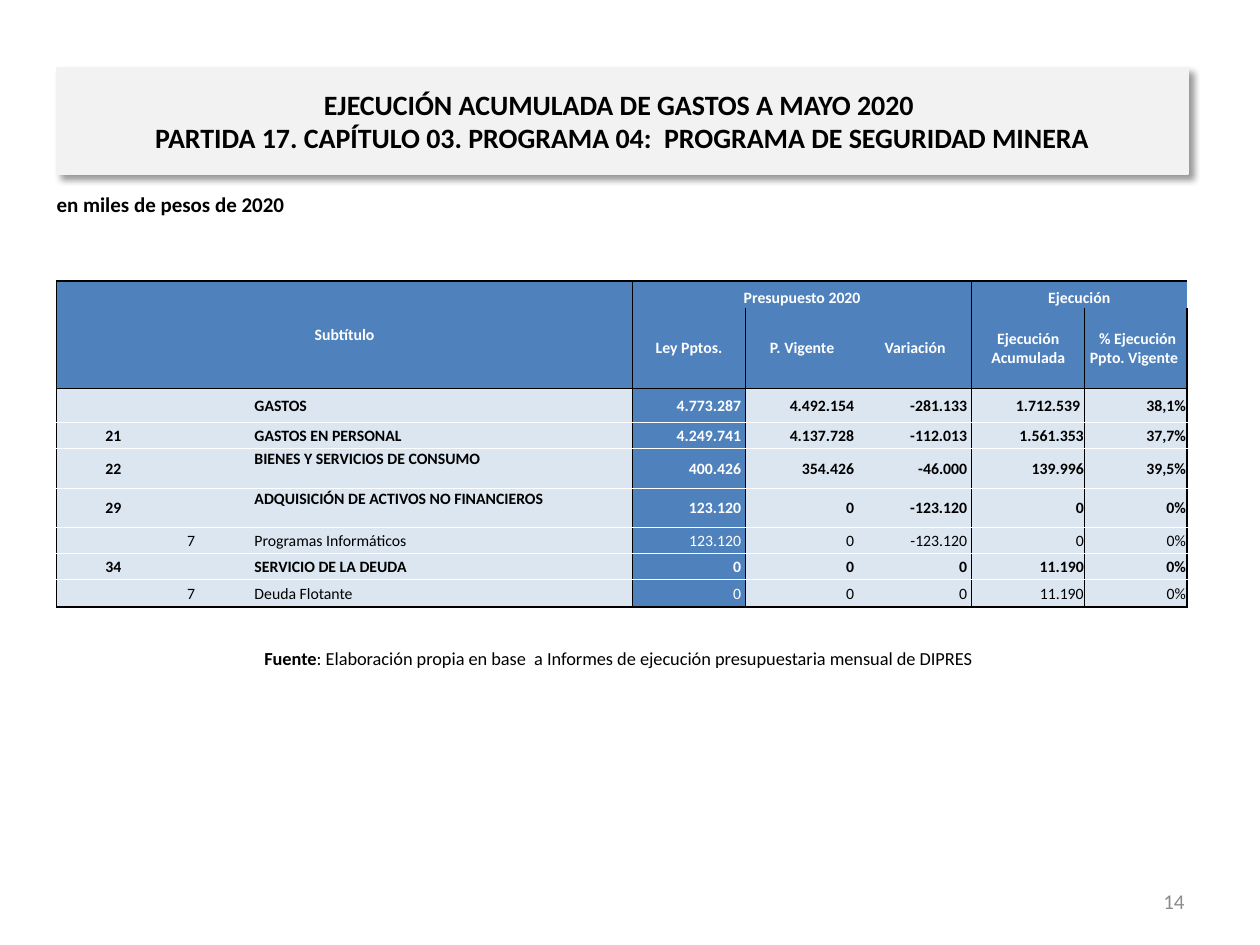
import pptx
import pptx.util
import pptx.dml.color
import pptx.enum.text
import pptx.oxml
import pptx.oxml.ns
from lxml import etree

Cm, Pt = pptx.util.Cm, pptx.util.Pt
RGBColor = pptx.dml.color.RGBColor
ALIGN = pptx.enum.text.PP_ALIGN
ANCHOR = pptx.enum.text.MSO_ANCHOR
qn = pptx.oxml.ns.qn

BLACK = RGBColor(0x00, 0x00, 0x00)
WHITE = RGBColor(0xFF, 0xFF, 0xFF)
BLUE = RGBColor(0x4F, 0x81, 0xBD)
PALE_BLUE = RGBColor(0xDC, 0xE6, 0xF1)
LIGHT_GREY = RGBColor(0xF2, 0xF2, 0xF2)
PAGE_GREY = RGBColor(0x8C, 0x8C, 0x8C)
FONT = "Calibri"
PLAIN_TABLE = "{2D5ABB26-0587-4C30-8999-92F81FD0307C}"

COLUMN_WIDTHS = [2.29, 0.84, 0.84, 7.64, 2.28, 2.28, 2.28, 2.28, 2.06]
ROW_HEIGHTS = [0.54, 1.63, 0.69, 0.53, 0.79, 0.79, 0.53, 0.53, 0.55]
HEADINGS = ["Ley Pptos.", "P. Vigente", "Variación", "Ejecución Acumulada",
            " % Ejecución Ppto. Vigente "]
# subtítulo, ítem, name, five figures
BUDGET = [
    ("", "", "GASTOS", "4.773.287 ", "4.492.154 ", "-281.133 ", "1.712.539 ", "38,1%"),
    ("21", "", "GASTOS EN PERSONAL", "4.249.741 ", "4.137.728 ", "-112.013 ", "1.561.353", "37,7%"),
    ("22", "", "BIENES Y SERVICIOS DE CONSUMO", "400.426 ", "354.426 ", "-46.000 ", "139.996", "39,5%"),
    ("29", "", "ADQUISICIÓN DE ACTIVOS NO FINANCIEROS", "123.120 ", "0 ", "-123.120 ", "0", "0%"),
    ("", "7", "Programas Informáticos", "123.120 ", "0 ", "-123.120 ", "0", "0%"),
    ("34", "", "SERVICIO DE LA DEUDA", "0 ", "0 ", "0 ", "11.190", "0%"),
    ("", "7", "Deuda Flotante", "0 ", "0 ", "0 ", "11.190", "0%"),
]
NAME_COLUMN, LAW_COLUMN, CHANGE_COLUMN, SPENT_COLUMN, LAST_COLUMN = 3, 4, 6, 7, 8
TALL_ROWS = (4, 5)


def add_run(paragraph, text, size, color, bold=False):
    run = paragraph.add_run()
    run.text = text
    run.font.name, run.font.size, run.font.bold = FONT, Pt(size), bold
    run.font.color.rgb = color


def add_title(slide, box, lines):
    title = slide.shapes.title
    title.left, title.top, title.width, title.height = box
    title.fill.solid()
    title.fill.fore_color.rgb = LIGHT_GREY
    title.line.color.rgb = LIGHT_GREY
    title.line.width = Pt(0.75)
    # Soft shadow to the lower right
    title.shadow.inherit = False
    effects = title._element.spPr.find(qn("a:effectLst"))
    shadow = etree.SubElement(effects, qn("a:outerShdw"), blurRad=str(Pt(4)),
                              dist=str(Pt(3)), dir="2700000", algn="tl", rotWithShape="0")
    tint = etree.SubElement(shadow, qn("a:srgbClr"), val=str(BLACK))
    etree.SubElement(tint, qn("a:alpha"), val="40000")

    frame = title.text_frame
    frame.word_wrap = True
    frame.auto_size = pptx.enum.text.MSO_AUTO_SIZE.NONE
    frame.vertical_anchor = ANCHOR.MIDDLE
    paragraph = frame.paragraphs[0]
    paragraph.alignment = ALIGN.CENTER
    for number, line in enumerate(lines):
        if number:
            paragraph.add_line_break()
        add_run(paragraph, line, 16, BLACK, True)


def add_caption(slide, box, runs, size, color, align, anchor=ANCHOR.MIDDLE):
    frame = slide.shapes.add_textbox(*box).text_frame
    frame.word_wrap = True
    frame.vertical_anchor = anchor
    paragraph = frame.paragraphs[0]
    paragraph.alignment = align
    for text, bold in runs:
        add_run(paragraph, text, size, color, bold)


def fill_cell(cell, text, fill, color, align, bold, anchor=ANCHOR.MIDDLE):
    cell.fill.solid()
    cell.fill.fore_color.rgb = fill
    cell.margin_left = cell.margin_right = cell.margin_top = Cm(0.02)
    cell.margin_bottom = 0
    cell.vertical_anchor = anchor
    paragraph = cell.text_frame.paragraphs[0]
    paragraph.alignment = align
    if text:
        add_run(paragraph, text, 9, color, bold)
    else:
        # Keeps an empty cell from stretching its row
        etree.SubElement(paragraph._p, qn("a:endParaRPr"), sz="900")


def set_borders(cell, row, column):
    last_row = len(ROW_HEIGHTS) - 1
    edges = {}
    if column in (0, LAW_COLUMN, SPENT_COLUMN):
        edges["L"] = (BLACK, 0.5 if column else 1)
    if column in (NAME_COLUMN, CHANGE_COLUMN, LAST_COLUMN):
        edges["R"] = (BLACK, 1 if column == LAST_COLUMN else 0.5)
    if row == 0:
        edges["T"] = (BLACK, 1)
    elif row >= 2:
        edges["T"] = (BLACK if row == 2 else WHITE, 0.5)
    if row == last_row:
        edges["B"] = (BLACK, 1)
    elif row >= 1:
        edges["B"] = (BLACK if row == 1 else WHITE, 0.5)

    properties = cell._tc.get_or_add_tcPr()
    for position, side in enumerate(side for side in "LRTB" if side in edges):
        color, width = edges[side]
        line = properties.makeelement(qn("a:ln" + side), {"w": str(Pt(width))})
        solid = etree.SubElement(line, qn("a:solidFill"))
        etree.SubElement(solid, qn("a:srgbClr"), val=str(color))
        properties.insert(position, line)


def add_budget_table(slide, box):
    table = slide.shapes.add_table(len(ROW_HEIGHTS), len(COLUMN_WIDTHS), *box).table
    table._tbl.tblPr.find(qn("a:tableStyleId")).text = PLAIN_TABLE
    table.first_row = table.horz_banding = False
    for column, width in zip(table.columns, COLUMN_WIDTHS):
        column.width = Cm(width)
    for row, height in zip(table.rows, ROW_HEIGHTS):
        row.height = Cm(height)

    # Header: two rows with merged groups
    top = ["Subtítulo", "", "", "", "Presupuesto 2020", "", "", "Ejecución", ""]
    for row, labels in enumerate([top, [""] * LAW_COLUMN + HEADINGS]):
        for column, label in enumerate(labels):
            grouped = row == 0 and column >= LAW_COLUMN
            fill_cell(table.cell(row, column), label, BLUE, WHITE, ALIGN.CENTER, True,
                      ANCHOR.BOTTOM if grouped else ANCHOR.MIDDLE)
    for start, end in [((0, 0), (1, NAME_COLUMN)),
                       ((0, LAW_COLUMN), (0, CHANGE_COLUMN)),
                       ((0, SPENT_COLUMN), (0, LAST_COLUMN))]:
        table.cell(*start).merge(table.cell(*end))

    # Body: items are plain, totals and subtítulos bold
    for row, (code, item, name, *figures) in enumerate(BUDGET, start=2):
        for column, text in enumerate([code, item, "", name, *figures]):
            law = column == LAW_COLUMN
            named = column == NAME_COLUMN
            align = ALIGN.CENTER if column < NAME_COLUMN else ALIGN.LEFT if named else ALIGN.RIGHT
            fill_cell(table.cell(row, column), text, BLUE if law else PALE_BLUE,
                      WHITE if law else BLACK, align, not item,
                      ANCHOR.TOP if named and row in TALL_ROWS else ANCHOR.MIDDLE)

    for row in range(len(ROW_HEIGHTS)):
        for column in range(len(COLUMN_WIDTHS)):
            set_borders(table.cell(row, column), row, column)


def main():
    deck = pptx.Presentation()
    deck.slide_width, deck.slide_height = Cm(25.4), Cm(19.05)
    slide = deck.slides.add_slide(deck.slide_layouts[5])
    left, width = Cm(1.14), Cm(22.81)

    add_title(slide, (left, Cm(1.36), width, Cm(2.15)),
              ["EJECUCIÓN ACUMULADA DE GASTOS A MAYO 2020 ",
               "PARTIDA 17. CAPÍTULO 03. PROGRAMA 04:  PROGRAMA DE SEGURIDAD MINERA"])
    add_caption(slide, (Cm(0.89), Cm(3.73), Cm(19.02), Cm(0.99)),
                [("en miles de pesos de 2020", True)], 12, BLACK, ALIGN.LEFT, ANCHOR.TOP)
    add_budget_table(slide, (left, Cm(5.66), width, Cm(sum(ROW_HEIGHTS))))
    add_caption(slide, (left, Cm(12.93), Cm(22.66), Cm(0.66)),
                [("Fuente", True),
                 (": Elaboración propia en base  a Informes de ejecución "
                  "presupuestaria mensual de DIPRES", False)],
                10.5, BLACK, ALIGN.CENTER)
    add_caption(slide, (Cm(18.21), Cm(17.65), Cm(5.92), Cm(1.02)),
                [("14", False)], 12, PAGE_GREY, ALIGN.RIGHT)
    deck.save("out.pptx")


if __name__ == "__main__":
    main()
